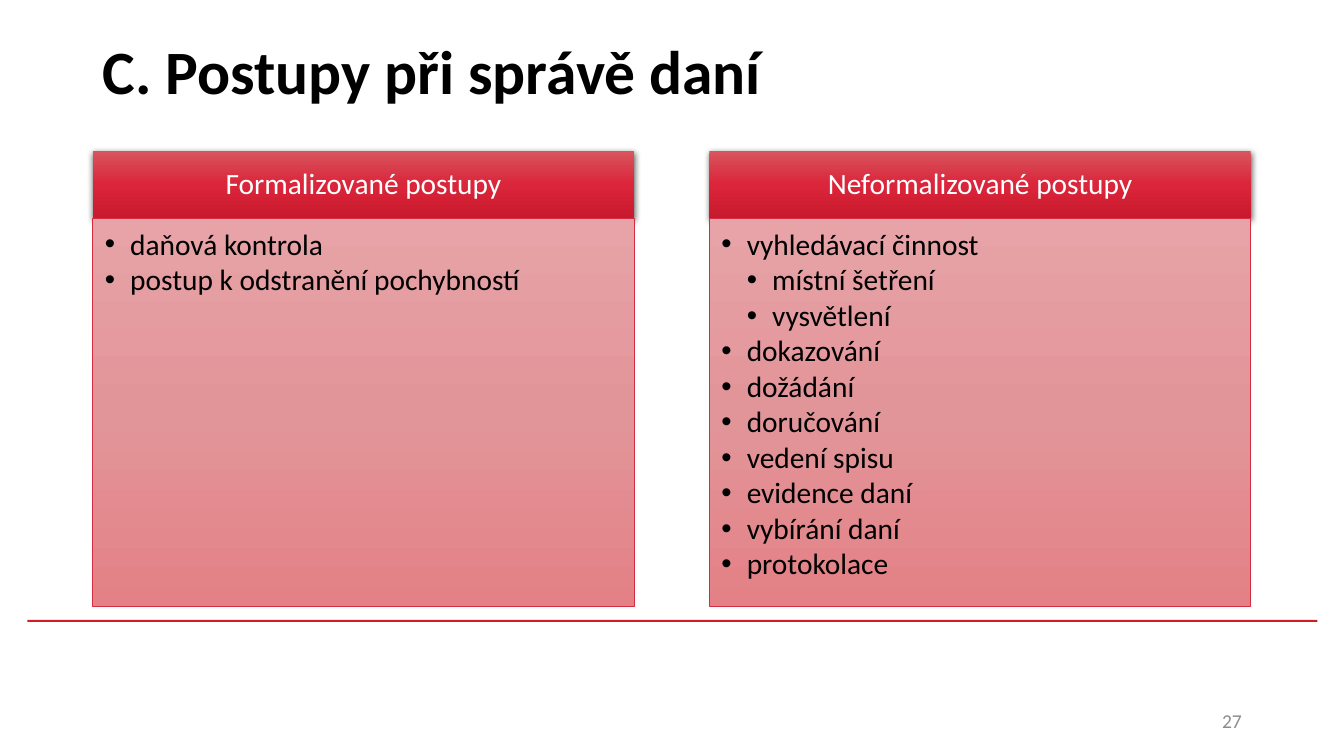
from lxml.etree import SubElement
from copy import deepcopy
from pptx import Presentation
from pptx.dml.color import RGBColor
from pptx.enum.shapes import MSO_SHAPE
from pptx.enum.text import MSO_ANCHOR, MSO_AUTO_SIZE, PP_ALIGN
from pptx.oxml.ns import qn
from pptx.util import Cm, Pt

BLACK = RGBColor(0x00, 0x00, 0x00)
WHITE = RGBColor(0xFF, 0xFF, 0xFF)
GREY = RGBColor(0x8C, 0x8C, 0x8C)
RULE_RED = RGBColor(0xCD, 0x1F, 0x21)
BORDER_RED = RGBColor(0xD2, 0x2D, 0x40)
HEADER_REDS = [RGBColor(0xD8, 0x55, 0x5E), RGBColor(0xDA, 0x25, 0x3A), RGBColor(0xC9, 0x19, 0x2E)]
PANEL_REDS = [RGBColor(0xE7, 0xA3, 0xA7), RGBColor(0xE2, 0x95, 0x99), RGBColor(0xE3, 0x81, 0x86)]

# Each item is (text, level)
COLUMNS = [
    ("Formalizované postupy", [
        ("daňová kontrola", 0),
        ("postup k odstranění pochybností", 0),
    ]),
    ("Neformalizované postupy", [
        ("vyhledávací činnost", 0),
        ("místní šetření", 1),
        ("vysvětlení", 1),
        ("dokazování", 0),
        ("dožádání", 0),
        ("doručování", 0),
        ("vedení spisu", 0),
        ("evidence daní", 0),
        ("vybírání daní", 0),
        ("protokolace", 0),
    ]),
]
COLUMN_LEFT, COLUMN_STEP, COLUMN_WIDTH = 2.34, 15.54, 13.64
HEADER_TOP, HEADER_HEIGHT, PANEL_HEIGHT = 3.81, 1.68, 9.78
BULLET_INDENT = 0.64


def write_paragraph(paragraph, text, size=21, color=BLACK, bold=False, align=PP_ALIGN.LEFT,
                    line_spacing=0.9, space_after=0, level=0, bullet=False):
    paragraph.alignment = align
    paragraph.level = level
    if bullet:
        properties = paragraph._p.get_or_add_pPr()
        properties.set("marL", str(Cm(BULLET_INDENT * (level + 1))))
        properties.set("indent", str(-Cm(BULLET_INDENT)))
        SubElement(properties, qn("a:buChar")).set("char", "•")
    paragraph.line_spacing = line_spacing
    paragraph.space_before = Pt(0)
    paragraph.space_after = Pt(space_after)
    run = paragraph.add_run()
    run.text = text
    run.font.name = "Calibri"
    run.font.size = Pt(size)
    run.font.bold = bold
    run.font.color.rgb = color


class SlideBuilder:
    def __init__(self, slide):
        self.slide = slide

    def place(self, shape, left, top, width, height):
        shape.left, shape.top, shape.width, shape.height = Cm(left), Cm(top), Cm(width), Cm(height)

    def frame(self, shape, anchor, margins):
        frame = shape.text_frame
        frame.word_wrap = True
        frame.auto_size = MSO_AUTO_SIZE.NONE
        frame.vertical_anchor = anchor
        (frame.margin_left, frame.margin_top,
         frame.margin_right, frame.margin_bottom) = [Cm(margin) for margin in margins]
        return frame

    def gradient(self, shape, colors):
        shape.fill.gradient()
        shape.fill.gradient_angle = 270
        stop_list = shape._element.spPr.find(".//" + qn("a:gsLst"))
        stop_list.append(deepcopy(stop_list[-1]))
        for index, stop in enumerate(shape.fill.gradient_stops):
            stop.position = index / 2
            stop.color.rgb = colors[index]

    def soft_shadow(self, shape):
        shape.shadow.inherit = False
        effects = shape._element.spPr.find(qn("a:effectLst"))
        shadow = SubElement(effects, qn("a:outerShdw"), blurRad=str(Pt(4.5)), dist=str(Pt(1.5)),
                            dir="5400000", algn="ctr", rotWithShape="0")
        color = SubElement(shadow, qn("a:srgbClr"), val=str(BLACK))
        SubElement(color, qn("a:alpha"), val="63000")

    def title(self, text):
        shape = self.slide.shapes.title
        self.place(shape, 2.34, 0.05, 29.21, 3.68)
        frame = self.frame(shape, MSO_ANCHOR.MIDDLE, (0.25, 0.13, 0.25, 0.13))
        write_paragraph(frame.paragraphs[0], text, size=44, bold=True)

    def header(self, shape, text, left):
        self.place(shape, left, HEADER_TOP, COLUMN_WIDTH, HEADER_HEIGHT)
        self.gradient(shape, HEADER_REDS)
        shape.line.fill.background()
        self.soft_shadow(shape)
        frame = self.frame(shape, MSO_ANCHOR.MIDDLE, (0.4, 0.23, 0.4, 0.23))
        write_paragraph(frame.paragraphs[0], text, color=WHITE, align=PP_ALIGN.CENTER)

    def panel(self, shape, items, left):
        self.place(shape, left, HEADER_TOP + HEADER_HEIGHT, COLUMN_WIDTH, PANEL_HEIGHT)
        self.gradient(shape, PANEL_REDS)
        shape.line.color.rgb = BORDER_RED
        shape.line.width = Pt(0.5)
        frame = self.frame(shape, MSO_ANCHOR.TOP, (0.3, 0.3, 0.4, 0.46))
        for index, (text, level) in enumerate(items):
            paragraph = frame.add_paragraph() if index else frame.paragraphs[0]
            write_paragraph(paragraph, text, level=level, bullet=True, space_after=2.7)

    def rule(self):
        shape = self.slide.shapes.add_shape(MSO_SHAPE.RECTANGLE, Cm(0.69), Cm(15.62), Cm(32.51), Cm(0.05))
        shape.shadow.inherit = False
        shape.fill.solid()
        shape.fill.fore_color.rgb = RULE_RED
        shape.line.fill.background()

    def page_number(self, text):
        shape = self.slide.shapes.add_textbox(Cm(23.93), Cm(17.65), Cm(7.62), Cm(1.02))
        frame = self.frame(shape, MSO_ANCHOR.MIDDLE, (0.25, 0.13, 0.25, 0.13))
        write_paragraph(frame.paragraphs[0], text, size=14, color=GREY,
                        align=PP_ALIGN.RIGHT, line_spacing=1.0)


def main():
    presentation = Presentation()
    presentation.slide_width, presentation.slide_height = Cm(33.87), Cm(19.05)
    comparison_layout = presentation.slide_layouts[4]
    slide = presentation.slides.add_slide(comparison_layout)
    builder = SlideBuilder(slide)

    # Title, rule and page number
    builder.title("C. Postupy při správě daní")
    builder.rule()
    builder.page_number("27")

    # Two columns: the layout gives a header and a list for each
    bodies = list(slide.placeholders)[1:]
    for index, (heading, items) in enumerate(COLUMNS):
        left = COLUMN_LEFT + index * COLUMN_STEP
        builder.header(bodies[2 * index], heading, left)
        builder.panel(bodies[2 * index + 1], items, left)

    presentation.save("out.pptx")


if __name__ == "__main__":
    main()
